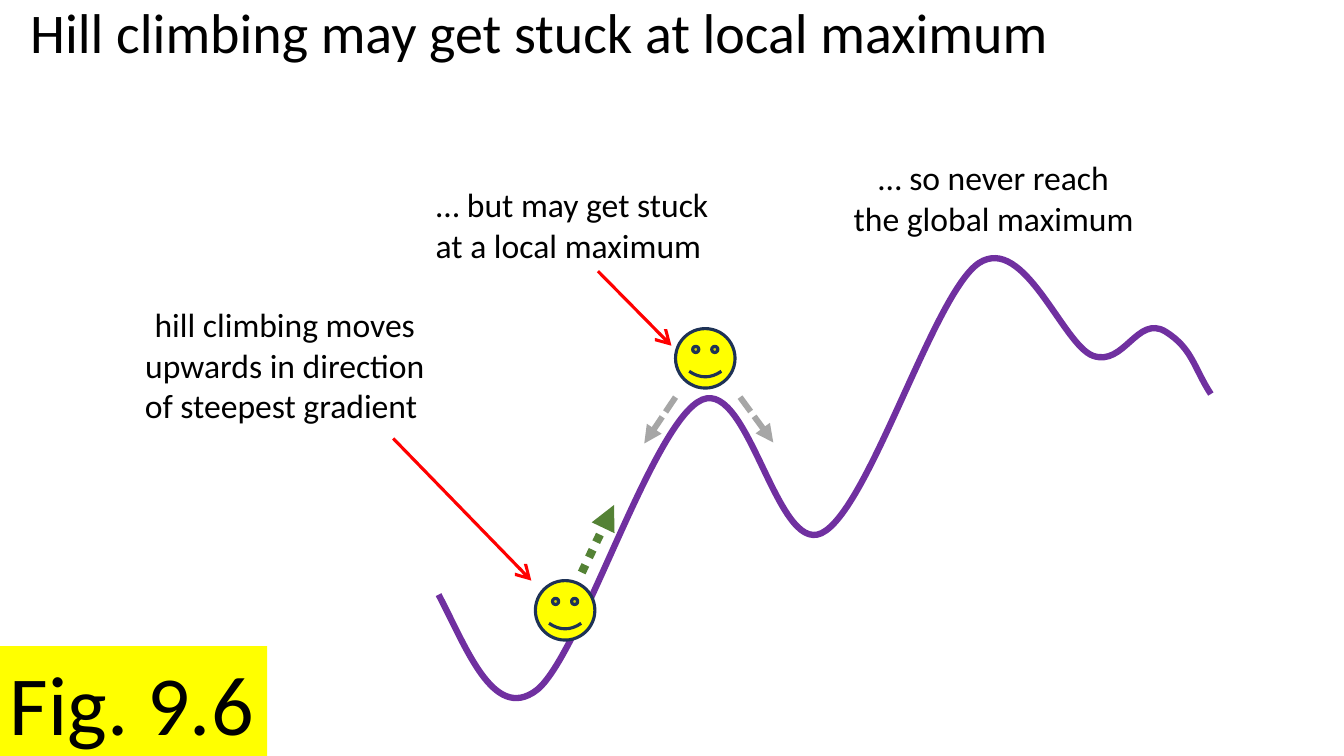
from dataclasses import dataclass

from lxml.etree import SubElement
from pptx import Presentation
from pptx.dml.color import RGBColor
from pptx.enum.dml import MSO_LINE_DASH_STYLE as Dash
from pptx.enum.shapes import MSO_AUTO_SHAPE_TYPE as Preset
from pptx.enum.shapes import MSO_CONNECTOR_TYPE as Connector
from pptx.enum.text import MSO_ANCHOR as Anchor
from pptx.enum.text import MSO_AUTO_SIZE as AutoSize
from pptx.enum.text import PP_ALIGN as Align
from pptx.oxml.ns import qn
from pptx.util import Emu, Pt

PX_PER_INCH = 100
SCALE = 914400 // PX_PER_INCH


@dataclass(frozen=True)
class Theme:
    font: str = "Calibri"
    ink: str = "000000"
    hill: str = "7030A0"
    face: str = "FFFF00"
    outline: str = "1E3256"
    pointer: str = "FF0000"
    climb: str = "548235"
    descent: str = "A6A6A6"
    title_size: int = 40
    note_size: int = 24
    figure_size: int = 60
    hill_width: float = 4.5
    thin_width: float = 2.25
    climb_width: float = 6
    descent_width: float = 4.25


THEME = Theme()

HILL_TOP_LEFT = (435, 256)
HILL_BOTTOM_RIGHT = (1201, 692)
HILL_START = (435, 590)
HILL_BENDS = [
    ((462, 641), (489, 717), (532, 685)),
    ((574, 653), (643, 431), (692, 399)),
    ((741, 366), (769, 551), (815, 529)),
    ((862, 506), (926, 291), (971, 261)),
    ((1016, 232), (1054, 342), (1084, 353)),
    ((1115, 364), (1128, 312), (1156, 329)),
    ((1183, 346), (1184, 365), (1201, 391)),
]
CLIMBERS = [(531, 576), (670, 326)]
CLIMBER_SIZE = 59
NOTES = [
    ("hill climbing moves upwards in direction of steepest gradient ", 125, 297, 131),
    ("… but may get stuck at a local maximum ", 410, 178, 91),
    ("… so never reach\vthe global maximum", 828, 151, 91),
]
NOTE_WIDTH = 315
POINTERS = [((390, 435), (527, 576)), ((593, 269), (666, 343))]
CLIMB = ((577, 568), (609, 501))
DESCENTS = [((670, 394), (639, 440)), ((734, 394), (767, 439))]


def px(*lengths):
    return [Emu(length * SCALE) for length in lengths]


def color(code):
    return RGBColor.from_string(code)


def style_line(line, code, width):
    line.color.rgb = color(code)
    line.width = Pt(width)


def write(frame, text, size, align):
    paragraph = frame.paragraphs[0]
    paragraph.text = text
    paragraph.alignment = align
    for run in paragraph.runs:
        run.font.name = THEME.font
        run.font.size = Pt(size)
        run.font.color.rgb = color(THEME.ink)
    return paragraph


def add_step(outline, tag, knots):
    step = SubElement(outline, qn(tag))
    left, top = HILL_TOP_LEFT
    for x, y in knots:
        across, down = px(x - left, y - top)
        SubElement(step, qn("a:pt"), x=str(int(across)), y=str(int(down)))


def add_hill(shapes):
    builder = shapes.build_freeform(*px(*HILL_TOP_LEFT))
    builder.add_line_segments([px(*HILL_BOTTOM_RIGHT)], close=False)
    hill = builder.convert_to_shape()
    outline = next(hill._element.iter(qn("a:path")))
    for step in list(outline):
        outline.remove(step)
    add_step(outline, "a:moveTo", [HILL_START])
    for bend in HILL_BENDS:
        add_step(outline, "a:cubicBezTo", bend)
    hill.shadow.inherit = False
    hill.fill.background()
    style_line(hill.line, THEME.hill, THEME.hill_width)


def add_climber(shapes, left, top):
    climber = shapes.add_shape(Preset.SMILEY_FACE, *px(left, top, CLIMBER_SIZE, CLIMBER_SIZE))
    climber.shadow.inherit = False
    climber.fill.solid()
    climber.fill.fore_color.rgb = color(THEME.face)
    style_line(climber.line, THEME.outline, THEME.thin_width)


def add_arrow(shapes, start, end, code, width, head, head_size="med", dash=None):
    arrow = shapes.add_connector(Connector.STRAIGHT, *px(*start, *end))
    style_line(arrow.line, code, width)
    if dash is not None:
        arrow.line.dash_style = dash
    properties = arrow._element.spPr
    stroke = properties.find(qn("a:ln"))
    SubElement(stroke, qn("a:tailEnd"), type=head, w=head_size, len=head_size)
    SubElement(properties, qn("a:effectLst"))


def add_note(shapes, text, left, top, height):
    note = shapes.add_textbox(*px(left, top, NOTE_WIDTH, height))
    note.text_frame.word_wrap = True
    note.text_frame.auto_size = AutoSize.SHAPE_TO_FIT_TEXT
    write(note.text_frame, text, THEME.note_size, Align.CENTER)


def add_figure_label(shapes, text):
    label = shapes.add_textbox(*px(0, 641, 265, 111))
    label.fill.solid()
    label.fill.fore_color.rgb = color(THEME.face)
    label.text_frame.word_wrap = False
    label.text_frame.auto_size = AutoSize.SHAPE_TO_FIT_TEXT
    write(label.text_frame, text, THEME.figure_size, Align.LEFT)


def set_title(title, text):
    title.left, title.top, title.width, title.height = px(20, 0, 1277, 171)
    frame = title.text_frame
    frame.auto_size = AutoSize.NONE
    frame.vertical_anchor = Anchor.TOP
    write(frame, text, THEME.title_size, Align.LEFT).line_spacing = 0.9


def main():
    deck = Presentation()
    deck.slide_width, deck.slide_height = px(1333, 750)
    slide = deck.slides.add_slide(deck.slide_layouts.get_by_name("Title Only"))
    shapes = slide.shapes
    set_title(shapes.title, "Hill climbing may get stuck at local maximum")
    add_hill(shapes)
    for note in NOTES:
        add_note(shapes, *note)
    for start, end in POINTERS:
        add_arrow(shapes, start, end, THEME.pointer, THEME.thin_width, "arrow", "lg")
    for corner in CLIMBERS:
        add_climber(shapes, *corner)
    add_arrow(shapes, *CLIMB, THEME.climb, THEME.climb_width, "triangle", dash=Dash.ROUND_DOT)
    for start, end in DESCENTS:
        add_arrow(shapes, start, end, THEME.descent, THEME.descent_width, "triangle", dash=Dash.SQUARE_DOT)
    add_figure_label(shapes, "Fig. 9.6")
    deck.save("out.pptx")


if __name__ == "__main__":
    main()
